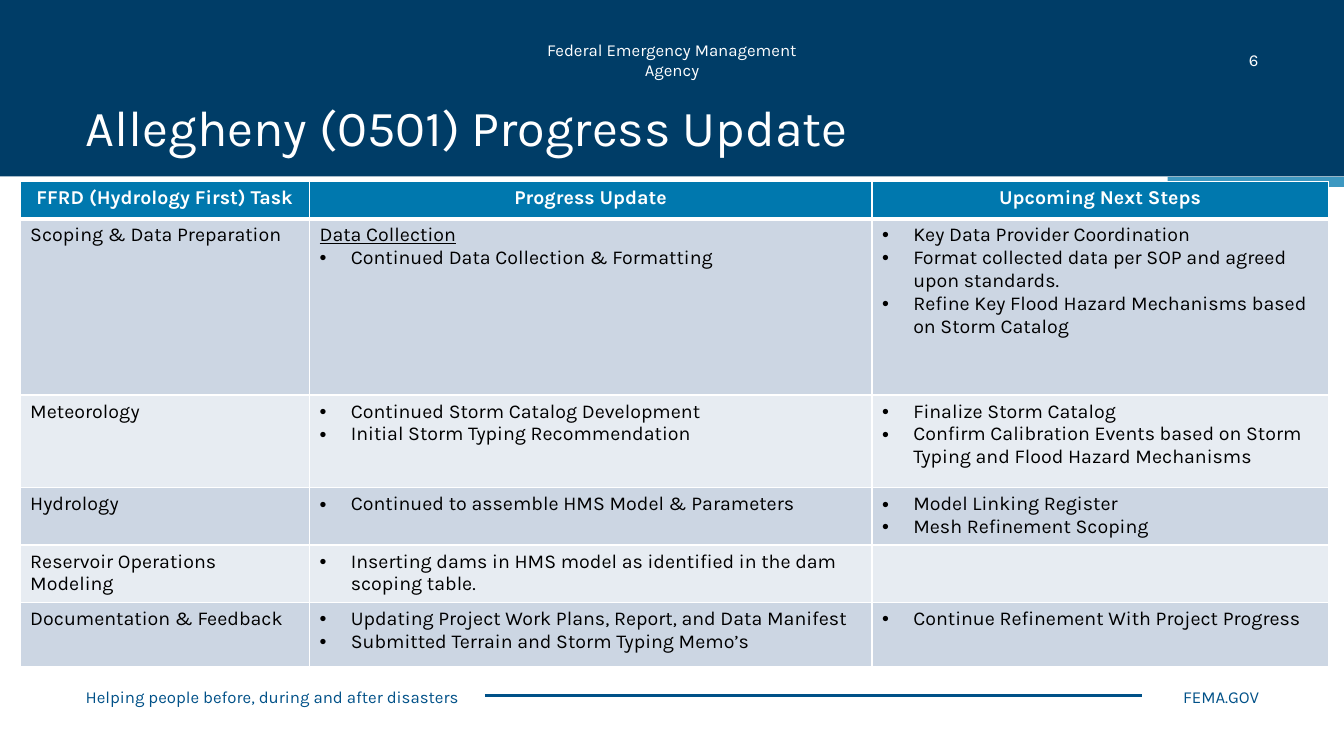
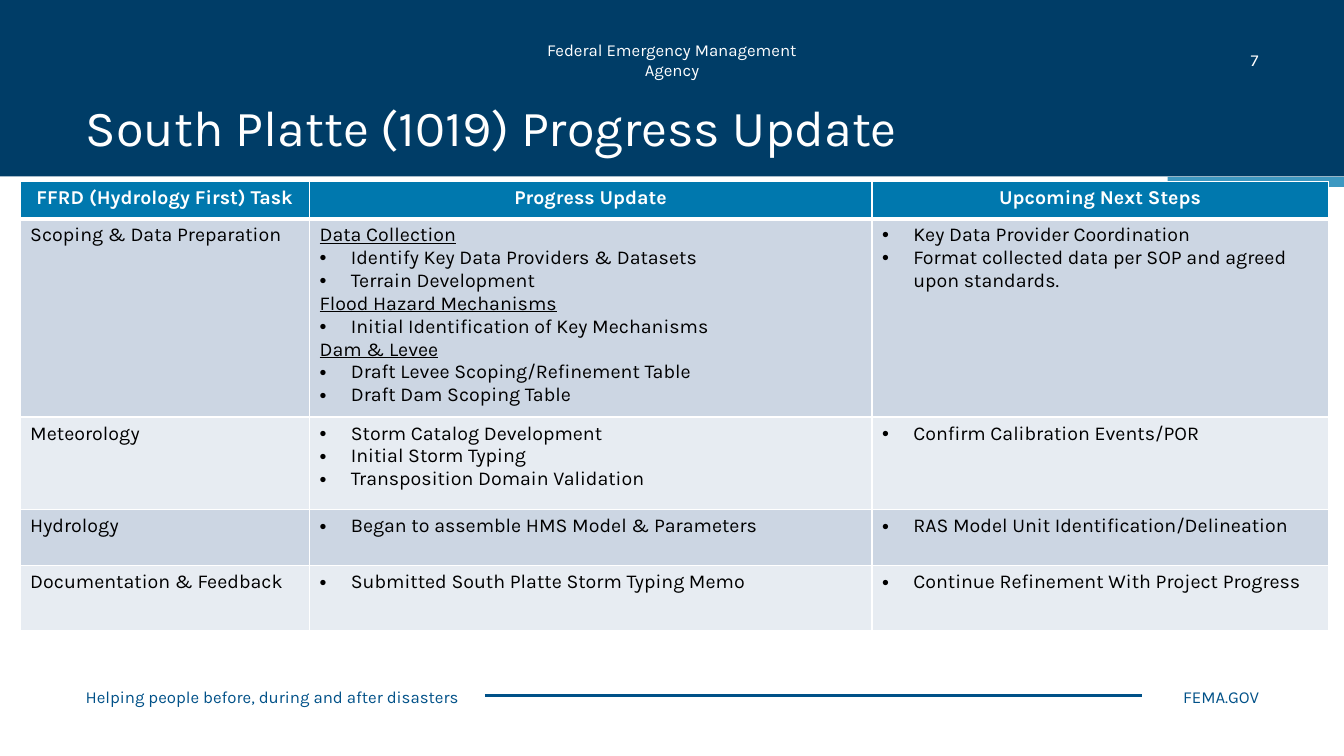
"""Build two progress update slides for hydrology study areas."""
from dataclasses import dataclass
from typing import Optional

from lxml import etree
from pptx import Presentation
from pptx.dml.color import RGBColor
from pptx.enum.shapes import MSO_CONNECTOR, MSO_SHAPE
from pptx.enum.text import MSO_ANCHOR, MSO_AUTO_SIZE, PP_ALIGN
from pptx.oxml.ns import qn
from pptx.util import Emu, Inches, Pt

NAVY = RGBColor(0x00, 0x3D, 0x67)
BLUE = RGBColor(0x00, 0x51, 0x88)
HEADER_BLUE = RGBColor(0x00, 0x78, 0xAE)
ACCENT = RGBColor(0x3D, 0x98, 0xC1)
ROW_DARK = RGBColor(0xCC, 0xD6, 0xE3)
ROW_LIGHT = RGBColor(0xE7, 0xEC, 0xF2)
WHITE = RGBColor(0xFF, 0xFF, 0xFF)
BLACK = RGBColor(0x00, 0x00, 0x00)

LEFT, CENTER, RIGHT = PP_ALIGN.LEFT, PP_ALIGN.CENTER, PP_ALIGN.RIGHT
MIDDLE = MSO_ANCHOR.MIDDLE
RECTANGLE = MSO_SHAPE.RECTANGLE
STRAIGHT = MSO_CONNECTOR.STRAIGHT
NO_FIT = MSO_AUTO_SIZE.NONE

FONT = "Karla"
WIDTH, HEIGHT = Inches(13.33), Inches(7.5)
TITLE_ONLY = 5
INDENT = Inches(0.31)


def across(percent: float) -> Emu:
    """Turn a percentage of the slide width into a length."""
    return Emu(round(WIDTH * percent / 100))


def down(percent: float) -> Emu:
    """Turn a percentage of the slide height into a length."""
    return Emu(round(HEIGHT * percent / 100))


@dataclass(frozen=True)
class Area:
    """Place on the slide, in percent of its width and height."""
    left: float
    top: float
    width: float
    height: float

    def lengths(self) -> tuple[Emu, Emu, Emu, Emu]:
        """Return left, top, width and height as lengths."""
        return across(self.left), down(self.top), across(self.width), down(self.height)


@dataclass(frozen=True)
class Style:
    """Look of a span of text."""
    size: float
    color: RGBColor
    bold: bool = False
    underline: bool = False


@dataclass(frozen=True)
class Label:
    """Short text in the header or footer."""
    text: str
    area: Area
    align: PP_ALIGN
    color: RGBColor


@dataclass(frozen=True)
class Line:
    """One paragraph of a table cell."""
    text: str
    style: Style
    align: PP_ALIGN = LEFT
    bullet: bool = False


@dataclass(frozen=True)
class Row:
    """Table row with its height in percent of the slide."""
    height: float
    cells: tuple[tuple[Line, ...], ...]


@dataclass(frozen=True)
class Update:
    """Content of one slide."""
    number: int
    title: str
    rows: tuple[Row, ...]


TITLE_STYLE = Style(36, WHITE)
HEADER_STYLE = Style(14, WHITE, bold=True)
BODY_STYLE = Style(14, BLACK)
HEADING_STYLE = Style(14, BLACK, underline=True)

BAND = Area(0, 0, 100, 23.33)
STRIPE = Area(86.88, 23.4, 13.12, 1.33)
TITLE = Area(5.63, 13.33, 88.8, 6.67)
TABLE = Area(1.5, 24, 97.35, 64)
NUMBER = Area(86.87, 5.87, 7.5, 4)
RULE_START, RULE_END, RULE_LEVEL = 36.08, 84.98, 92
COLUMNS = (21.53, 41.85, 33.97)

LABELS = (
    Label("Federal Emergency Management Agency", Area(38, 5.87, 24, 4), CENTER, WHITE),
    Label("Helping people before, during and after disasters",
          Area(5.63, 90.13, 31.5, 4), LEFT, BLUE),
    Label("FEMA.GOV", Area(86.93, 90.13, 7.5, 4), RIGHT, BLUE),
)


def heading(text: str) -> tuple[Line, ...]:
    """Return an underlined heading."""
    return (Line(text, HEADING_STYLE),)


def bullets(*texts: str) -> tuple[Line, ...]:
    """Return a bulleted line for each text."""
    return tuple(Line(text, BODY_STYLE, bullet=True) for text in texts)


def task(height: float, name: str, progress: tuple[Line, ...],
         steps: tuple[Line, ...] = ()) -> Row:
    """Return the row of one task."""
    return Row(height, ((Line(name, BODY_STYLE),), progress, steps))


HEADER = Row(4.93, tuple(
    (Line(text, HEADER_STYLE, CENTER),)
    for text in ("FFRD (Hydrology First) Task", "Progress Update", "Upcoming Next Steps")))
COORDINATION = bullets("Key Data Provider Coordination",
                       "Format collected data per SOP and agreed upon standards.")
REFINEMENT = bullets("Continue Refinement With Project Progress")

UPDATES = (
    Update(6, "Allegheny (0501) Progress Update", (
        HEADER,
        task(23.33, "Scoping & Data Preparation",
             heading("Data Collection")
             + bullets("Continued Data Collection & Formatting"),
             COORDINATION
             + bullets("Refine Key Flood Hazard Mechanisms based on Storm Catalog")),
        task(12.27, "Meteorology",
             bullets("Continued Storm Catalog Development",
                     "Initial Storm Typing Recommendation"),
             bullets("Finalize Storm Catalog",
                     "Confirm Calibration Events based on Storm Typing "
                     "and Flood Hazard Mechanisms")),
        task(7.4, "Hydrology",
             bullets("Continued to assemble HMS Model & Parameters"),
             bullets("Model Linking Register", "Mesh Refinement Scoping")),
        task(7.4, "Reservoir Operations Modeling",
             bullets("Inserting dams in HMS model as identified in the dam scoping table.")),
        task(8.53, "Documentation & Feedback",
             bullets("Updating Project Work Plans, Report, and Data Manifest",
                     "Submitted Terrain and Storm Typing Memo’s"),
             REFINEMENT),
    )),
    Update(7, "South Platte (1019) Progress Update", (
        HEADER,
        task(25.47, "Scoping & Data Preparation",
             heading("Data Collection")
             + bullets("Identify Key Data Providers & Datasets", "Terrain Development")
             + heading("Flood Hazard Mechanisms")
             + bullets("Initial Identification of Key Mechanisms")
             + heading("Dam & Levee")
             + bullets("Draft Levee Scoping/Refinement Table", "Draft Dam Scoping Table"),
             COORDINATION),
        task(12.27, "Meteorology",
             bullets("Storm Catalog Development", "Initial Storm Typing",
                     "Transposition Domain Validation"),
             bullets("Confirm Calibration Events/POR")),
        task(7.4, "Hydrology",
             bullets("Began to assemble HMS Model & Parameters"),
             bullets("RAS Model Unit Identification/Delineation")),
        task(8.53, "Documentation & Feedback",
             bullets("Submitted South Platte Storm Typing Memo"),
             REFINEMENT),
    )),
)


def write(para, text: str, style: Style, align: PP_ALIGN = LEFT) -> None:
    """Add one styled span to a paragraph."""
    para.alignment = align
    span = para.add_run()
    span.text = text
    span.font.name = FONT
    span.font.size = Pt(style.size)
    span.font.bold = style.bold
    span.font.underline = style.underline
    span.font.color.rgb = style.color


def add_bar(page, area: Area, color: RGBColor):
    """Add a plain filled rectangle."""
    bar = page.shapes.add_shape(RECTANGLE, *area.lengths())
    bar.shadow.inherit = False
    bar.fill.solid()
    bar.fill.fore_color.rgb = color
    bar.line.fill.background()
    return bar


def add_label(page, label: Label) -> None:
    """Add a header or footer text."""
    box = page.shapes.add_textbox(*label.area.lengths())
    frame = box.text_frame
    frame.word_wrap = True
    frame.vertical_anchor = MIDDLE
    write(frame.paragraphs[0], label.text, Style(12, label.color), label.align)


def add_rule(page) -> None:
    """Add the footer line."""
    level = down(RULE_LEVEL)
    rule = page.shapes.add_connector(STRAIGHT, across(RULE_START), level,
                                     across(RULE_END), level)
    rule.line.color.rgb = BLUE
    rule.line.width = Pt(1.5)
    etree.SubElement(rule.element.spPr, qn("a:effectLst"))


def set_title(page, text: str) -> None:
    """Place and write the slide title."""
    title = page.shapes.title
    title.left, title.top, title.width, title.height = TITLE.lengths()
    frame = title.text_frame
    frame.auto_size = NO_FIT
    frame.vertical_anchor = MIDDLE
    para = frame.paragraphs[0]
    para.line_spacing = Pt(44)
    write(para, text, TITLE_STYLE)


def add_bullet(para) -> None:
    """Give a paragraph a hanging bullet."""
    properties = para._p.get_or_add_pPr()
    properties.set("marL", str(INDENT))
    properties.set("indent", str(-INDENT))
    etree.SubElement(properties, qn("a:buFont"), typeface="Arial")
    etree.SubElement(properties, qn("a:buChar"), char="•")


def set_border(cell, side: str, points: float) -> None:
    """Draw a white border on one side of a cell."""
    properties = cell._tc.get_or_add_tcPr()
    border = etree.SubElement(properties, qn(f"a:ln{side}"), w=str(Pt(points)))
    fill = etree.SubElement(border, qn("a:solidFill"))
    etree.SubElement(fill, qn("a:srgbClr"), val=str(WHITE))


def fill_cell(cell, lines: tuple[Line, ...], row_index: int) -> None:
    """Format a cell and write its lines."""
    weights = {"L": 1, "R": 1, "T": 3 if row_index == 1 else 1,
               "B": 3 if row_index == 0 else 1}
    for side, points in weights.items():
        set_border(cell, side, points)
    cell.fill.solid()
    banding = ROW_DARK if row_index % 2 else ROW_LIGHT
    cell.fill.fore_color.rgb = banding if row_index else HEADER_BLUE
    para: Optional[object] = None
    for line in lines:
        para = cell.text_frame.add_paragraph() if para else cell.text_frame.paragraphs[0]
        if line.bullet:
            add_bullet(para)
        write(para, line.text, line.style, line.align)


def add_task_table(page, rows: tuple[Row, ...]) -> None:
    """Add the table of tasks, progress and next steps."""
    table = page.shapes.add_table(len(rows), len(COLUMNS), *TABLE.lengths()).table
    table.horz_banding = False
    for column, share in zip(table.columns, COLUMNS):
        column.width = across(share)
    for row_index, row in enumerate(rows):
        table.rows[row_index].height = down(row.height)
        for column_index, lines in enumerate(row.cells):
            fill_cell(table.cell(row_index, column_index), lines, row_index)


def add_update(deck, update: Update) -> None:
    """Add one progress update slide."""
    page = deck.slides.add_slide(deck.slide_layouts[TITLE_ONLY])
    page.shapes.title.element.addprevious(add_bar(page, BAND, NAVY).element)
    add_bar(page, STRIPE, ACCENT)
    set_title(page, update.title)
    for label in (*LABELS, Label(str(update.number), NUMBER, RIGHT, WHITE)):
        add_label(page, label)
    add_rule(page)
    add_task_table(page, update.rows)


def main() -> None:
    """Build and save the deck."""
    deck = Presentation()
    deck.slide_width, deck.slide_height = WIDTH, HEIGHT
    for update in UPDATES:
        add_update(deck, update)
    deck.save("out.pptx")


if __name__ == "__main__":
    main()
